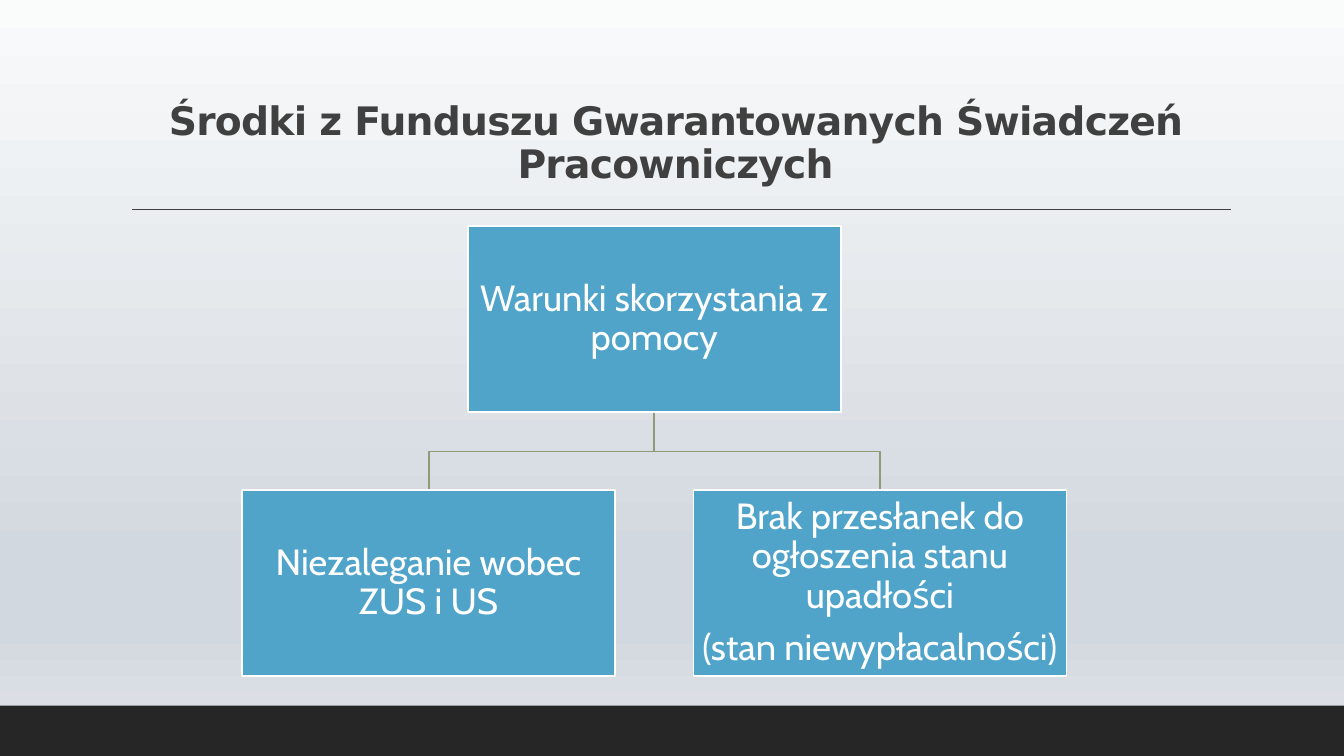
from lxml import etree
from pptx import Presentation
from pptx.dml.color import RGBColor
from pptx.enum.shapes import MSO_CONNECTOR, MSO_SHAPE
from pptx.enum.text import MSO_ANCHOR, PP_ALIGN
from pptx.oxml.ns import qn
from pptx.util import Inches, Pt

RECT, LINE = MSO_SHAPE.RECTANGLE, MSO_CONNECTOR.STRAIGHT
MIDDLE, BOTTOM = MSO_ANCHOR.MIDDLE, MSO_ANCHOR.BOTTOM
CENTER = PP_ALIGN.CENTER

TITLE = "Środki z Funduszu Gwarantowanych Świadczeń Pracowniczych"
ROOT = ["Warunki skorzystania z pomocy"]
LEAVES = [
    ["Niezaleganie wobec ZUS i US"],
    ["Brak przesłanek do ogłoszenia stanu upadłości", "(stan niewypłacalności)"],
]
STOPS = [(0, "FAFBFB"), (74, "D2D8DF"), (83, "D2D8DF"), (100, "E1E5E9")]
DARK, INK, BLUE, OLIVE, WHITE = "262626", "404040", "50A4CA", "92987A", "FFFFFF"

WIDE, HIGH = 13.33, 7.5
BOX_W, BOX_H = 3.7, 1.85
MID, TOP, LOW = 6.49, 2.24, 4.86
STEP = 4.48


def color(code):
    return RGBColor.from_string(code)


def backdrop(slide):
    fill = slide.background.fill
    fill.gradient()
    fill.gradient_angle = 270
    stops = slide.background._cSld.find(".//" + qn("a:gsLst"))
    for old in list(stops):
        stops.remove(old)
    for place, code in STOPS:
        stop = etree.SubElement(stops, qn("a:gs"), pos=str(place * 1000))
        etree.SubElement(stop, qn("a:srgbClr"), val=code)


def write(frame, lines, anchor, size, font, code, after=0, bold=False):
    frame.word_wrap = True
    frame.vertical_anchor = anchor
    for i, text in enumerate(lines):
        para = frame.paragraphs[0] if i == 0 else frame.add_paragraph()
        para.alignment = CENTER
        para.line_spacing = 0.9
        para.space_after = Pt(after)
        run = para.add_run()
        run.text = text
        run.font.size, run.font.name, run.font.bold = Pt(size), font, bold
        run.font.color.rgb = color(code)


def block(slide, x, y, w, h, code):
    shape = slide.shapes.add_shape(RECT, Inches(x), Inches(y), Inches(w), Inches(h))
    shape.shadow.inherit = False
    shape.fill.solid()
    shape.fill.fore_color.rgb = color(code)
    shape.line.fill.background()
    return shape


def heading(slide):
    box = slide.shapes.add_textbox(Inches(1.2), Inches(0.31), Inches(11), Inches(1.59))
    write(box.text_frame, [TITLE], BOTTOM, 28, "DejaVu Sans", INK, bold=True)
    run = box.text_frame.paragraphs[0].runs[0]
    run.font._element.set("spc", "-50")


def rule(slide):
    line = slide.shapes.add_connector(
        LINE, Inches(1.31), Inches(2.08), Inches(12.21), Inches(2.08))
    line.line.color.rgb = color(INK)
    line.line.width = Pt(1)
    etree.SubElement(line._element.spPr, qn("a:effectLst"))


def branch(slide, x):
    points = [(MID, STEP), (x, STEP), (x, LOW)]
    pen = slide.shapes.build_freeform(Inches(MID), Inches(TOP + BOX_H))
    pen.add_line_segments([(Inches(a), Inches(b)) for a, b in points], close=False)
    shape = pen.convert_to_shape()
    shape.shadow.inherit = False
    shape.fill.background()
    shape.line.color.rgb = color(OLIVE)
    shape.line.width = Pt(1.25)


def node(slide, x, y, lines):
    shape = block(slide, x - BOX_W / 2, y, BOX_W, BOX_H, BLUE)
    shape.line.color.rgb = color(WHITE)
    shape.line.width = Pt(1.25)
    frame = shape.text_frame
    frame.margin_left = frame.margin_right = Inches(0.02)
    frame.margin_top = frame.margin_bottom = Inches(0.02)
    write(frame, lines, MIDDLE, 26, "Cabin", WHITE, after=9)


def main():
    """Build the slide on the conditions for receiving aid."""
    deck = Presentation()
    deck.slide_width, deck.slide_height = Inches(WIDE), Inches(HIGH)
    slide = deck.slides.add_slide(deck.slide_layouts[6])
    backdrop(slide)
    block(slide, 0, 7, WIDE, 0.5, DARK)
    rule(slide)
    heading(slide)
    gap = BOX_W * 1.21
    spots = [MID + (i - (len(LEAVES) - 1) / 2) * gap for i in range(len(LEAVES))]
    for x in spots:
        branch(slide, x)
    node(slide, MID, TOP, ROOT)
    for x, lines in zip(spots, LEAVES):
        node(slide, x, LOW, lines)
    deck.save("out.pptx")


if __name__ == "__main__":
    main()
